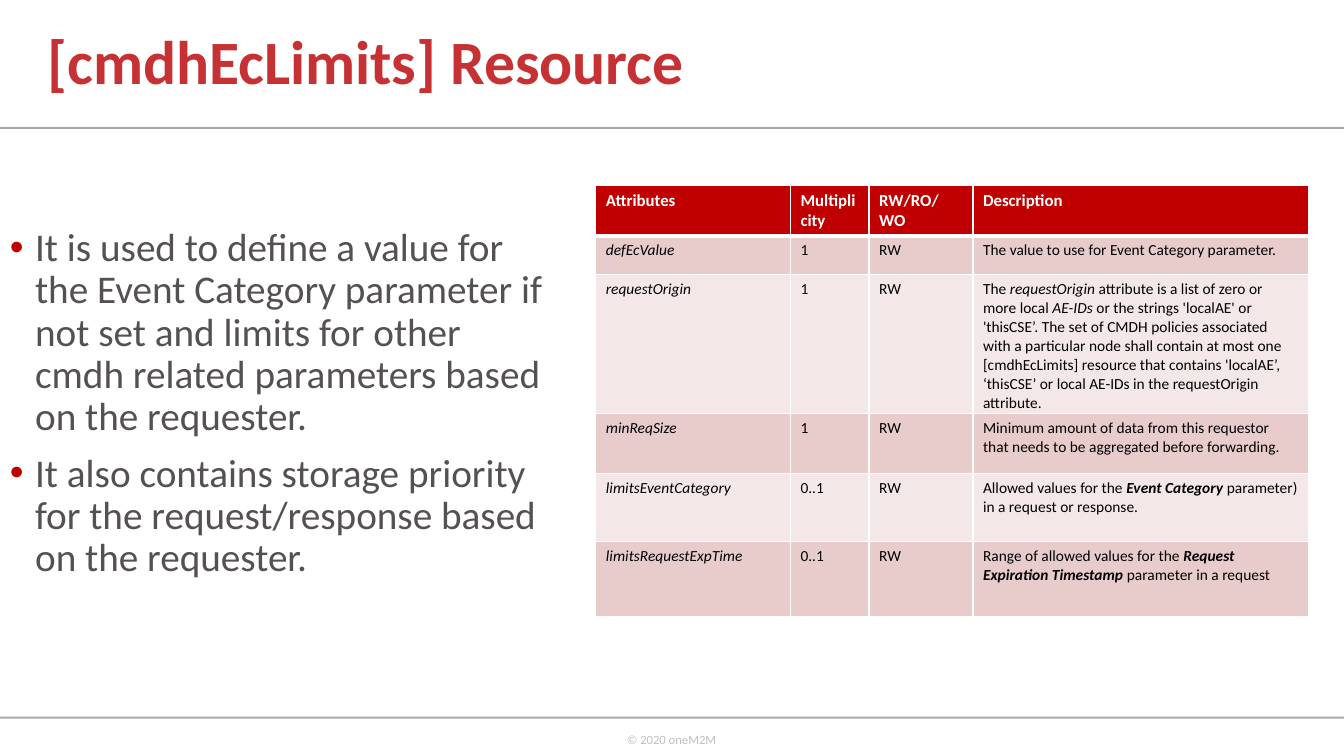
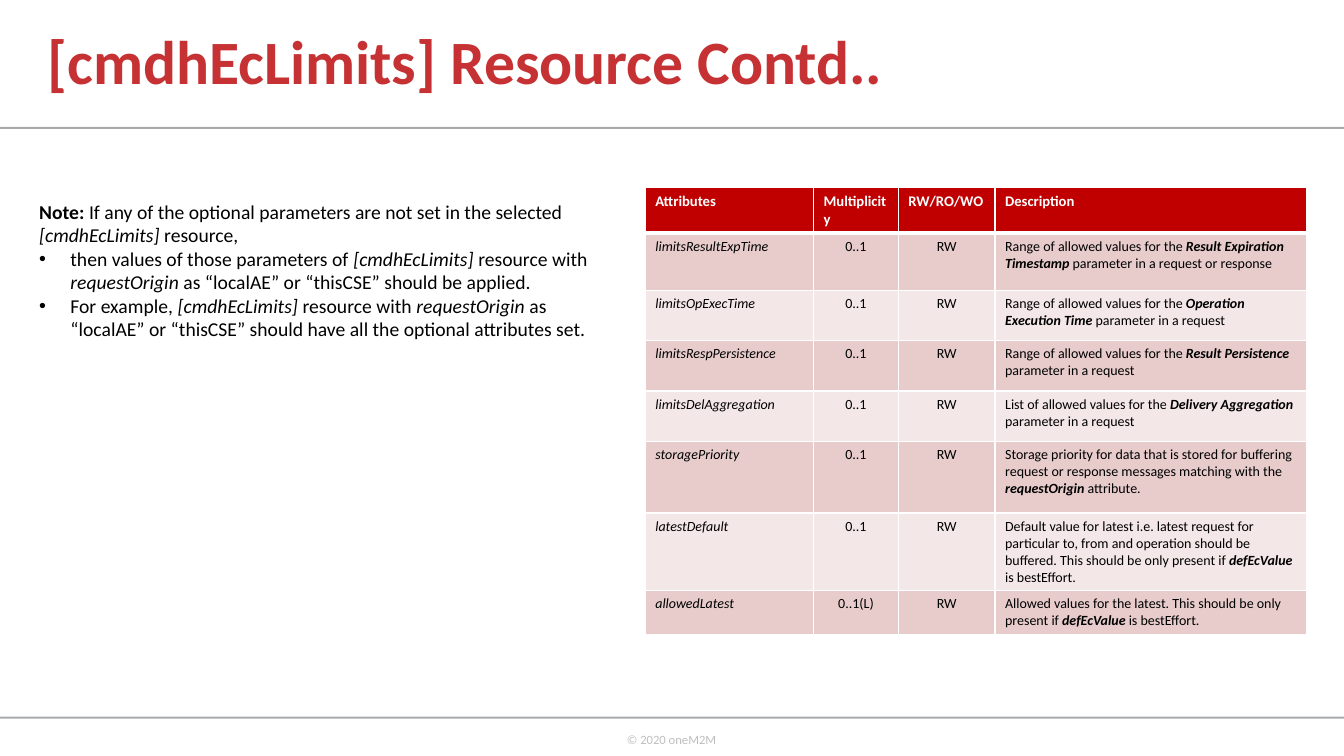
from lxml import etree
from pptx import Presentation
from pptx import util as u
from pptx.dml import color
from pptx.enum import shapes, text
from pptx.oxml import ns

Inches, Pt = u.Inches, u.Pt
FONT = "Calibri"
TITLE_RED, TABLE_RED = "C63133", "C00000"
RULE_GREY, FOOTER_GREY, BODY_GREY = "A7A9AC", "BFBFBF", "545054"
BLACK, WHITE = "000000", "FFFFFF"
BAND_FILLS = ["E8CCCC", "F4E7E7"]


def rgb(hex_code):
    return color.RGBColor.from_string(hex_code)


def write(paragraph, parts, size, hex_code, indent=0, bullet_hex=None):
    """Parts are plain strings or (string, style), with style made of b and i."""
    if indent:
        p_pr = paragraph._p.get_or_add_pPr()
        p_pr.set("marL", str(Inches(indent)))
        p_pr.set("indent", str(-Inches(indent)))
        if bullet_hex:
            bullet_color = etree.SubElement(p_pr, ns.qn("a:buClr"))
            etree.SubElement(bullet_color, ns.qn("a:srgbClr"), val=bullet_hex)
        etree.SubElement(p_pr, ns.qn("a:buFont"), typeface="Arial")
        etree.SubElement(p_pr, ns.qn("a:buChar"), char="•")
    for part in [parts] if isinstance(parts, str) else parts:
        words, style = (part, "") if isinstance(part, str) else part
        run = paragraph.add_run()
        run.text = words
        run.font.name, run.font.size = FONT, Pt(size)
        run.font.bold, run.font.italic = "b" in style, "i" in style
        run.font.color.rgb = rgb(hex_code)


# Table content: attribute, multiplicity, description; all are RW
HEADINGS = ["Attributes", "Multiplicity", "RW/RO/WO", "Description"]
RANGE = "Range of allowed values for the "
limits = [
    ("defEcValue", "1", "The value to use for Event Category parameter."),
    ("requestOrigin", "1", [
        "The ", ("requestOrigin", "i"),
        " attribute is a list of zero or more local ", ("AE-IDs", "i"),
        " or the strings 'localAE' or 'thisCSE’. The set of CMDH policies "
        "associated with a particular node shall contain at most one "
        "[cmdhEcLimits] resource that contains 'localAE’, ‘thisCSE’ or local "
        "AE-IDs in the requestOrigin attribute."]),
    ("minReqSize", "1", "Minimum amount of data from this requestor that needs "
                        "to be aggregated before forwarding."),
    ("limitsEventCategory", "0..1", [
        "Allowed values for the ", ("Event Category", "bi"),
        " parameter) in a request or response."]),
    ("limitsRequestExpTime", "0..1", [
        RANGE, ("Request Expiration Timestamp", "bi"),
        " parameter in a request"]),
]
more_limits = [
    ("limitsResultExpTime", "0..1", [
        RANGE, ("Result Expiration Timestamp ", "bi"),
        "parameter in a request or response"]),
    ("limitsOpExecTime", "0..1", [
        RANGE, ("Operation Execution Time ", "bi"), "parameter in a request"]),
    ("limitsRespPersistence", "0..1", [
        RANGE, ("Result Persistence", "bi"), " parameter in a request"]),
    ("limitsDelAggregation", "0..1", [
        "List of allowed values for the ", ("Delivery Aggregation ", "bi"),
        "parameter in a request"]),
    ("storagePriority", "0..1", [
        "Storage priority for data that is stored for buffering request or "
        "response messages matching with the ", ("requestOrigin", "bi"),
        " attribute."]),
    ("latestDefault", "0..1", [
        "Default value for latest i.e. latest request for particular to, from "
        "and operation should be buffered. This should be only present if ",
        ("defEcValue", "bi"), " is bestEffort."]),
    ("allowedLatest", "0..1(L)", [
        "Allowed values for the latest. This should be only present if ",
        ("defEcValue", "bi"), " is bestEffort."]),
]

# Text content
purpose = [
    "It is used to define a value for the Event Category parameter if not set "
    "and limits for other cmdh related parameters based on the requester.",
    "It also contains storage priority for the request/response based on the "
    "requester.",
]
note = [
    [("Note:", "b"),
     " If any of the optional parameters are not set in the selected ",
     ("[cmdhEcLimits] ", "i"), "resource,"],
    ["then values of those parameters of ", ("[cmdhEcLimits] ", "i"),
     "resource with ", ("requestOrigin ", "i"),
     "as “localAE” or “thisCSE” should be applied."],
    ["For example, ", ("[cmdhEcLimits]", "i"), " resource with ",
     ("requestOrigin", "i"),
     " as “localAE” or “thisCSE” should have all the optional attributes set."],
]

pages = [
    dict(title="[cmdhEcLimits] Resource",
         entries=limits, table_at=(5.91, 1.84), head_size=12, cell_size=11,
         widths=[1.93, 0.78, 1.03, 3.33], centred=(),
         heights=[0.39, 0.38, 0.97, 0.59, 0.68, 0.74],
         prose=purpose, prose_at=(0, 2.21, 5.49, 4.64), prose_size=28,
         prose_hex=BODY_GREY, bullet_hex=TABLE_RED, indents=[0.25, 0.25],
         line_spacing=0.9, gap=10),
    dict(title="[cmdhEcLimits] Resource Contd..",
         entries=more_limits, table_at=(6.4, 1.86), head_size=10.5, cell_size=10,
         widths=[1.67, 0.84, 0.96, 3.09], centred=(1, 2),
         heights=[0.43, 0.57, 0.5, 0.5, 0.5, 0.71, 0.73, 0.41],
         prose=note, prose_at=(0.29, 1.93, 5.85, 1.99), prose_size=14,
         prose_hex=BLACK, bullet_hex=None, indents=[0, 0.31, 0.31],
         line_spacing=1, gap=0),
]

deck = Presentation()
deck.slide_width, deck.slide_height = Inches(13.33), Inches(7.5)

for page in pages:
    slide = deck.slides.add_slide(deck.slide_layouts[5])

    # Rules below the title and above the footer
    for rule_top in (1.26, 7.11):
        rule = slide.shapes.add_shape(
            shapes.MSO_SHAPE.RECTANGLE,
            0, Inches(rule_top), deck.slide_width, Inches(0.02))
        rule.shadow.inherit = False
        rule.fill.solid()
        rule.fill.fore_color.rgb = rgb(RULE_GREY)
        rule.line.fill.background()

    # Footer
    footer = slide.shapes.add_textbox(
        Inches(6.12), Inches(7.21), Inches(1.12), Inches(0.4))
    footer.text_frame.word_wrap = False
    write(footer.text_frame.paragraphs[0], "© 2020 oneM2M", 9, FOOTER_GREY)

    # Title
    title = slide.shapes.title
    title.left, title.top = Inches(0.37), Inches(0)
    title.width, title.height = Inches(8.59), Inches(1.28)
    title.text_frame.auto_size = text.MSO_AUTO_SIZE.NONE
    title.text_frame.vertical_anchor = text.MSO_ANCHOR.MIDDLE
    heading = title.text_frame.paragraphs[0]
    heading.alignment = text.PP_ALIGN.LEFT
    heading.line_spacing = 0.9
    write(heading, [(page["title"], "b")], 44, TITLE_RED)

    # Prose on the left
    prose = slide.shapes.add_textbox(*map(Inches, page["prose_at"])).text_frame
    prose.word_wrap = True
    for index, (parts, indent) in enumerate(zip(page["prose"], page["indents"])):
        paragraph = prose.add_paragraph() if index else prose.paragraphs[0]
        paragraph.line_spacing = page["line_spacing"]
        if index:
            paragraph.space_before = Pt(page["gap"])
        write(paragraph, parts, page["prose_size"], page["prose_hex"],
              indent, page["bullet_hex"])

    # Attribute table
    rows = [[[(name, "b")] for name in HEADINGS]]
    rows += [[[(name, "i")], count, "RW", description]
             for name, count, description in page["entries"]]
    left, top = page["table_at"]
    attributes = slide.shapes.add_table(
        len(rows), len(HEADINGS), Inches(left), Inches(top),
        Inches(sum(page["widths"])), Inches(sum(page["heights"]))).table
    for column, width in zip(attributes.columns, page["widths"]):
        column.width = Inches(width)
    for row, height in zip(attributes.rows, page["heights"]):
        row.height = Inches(height)

    for r, row in enumerate(rows):
        for c, parts in enumerate(row):
            cell = attributes.cell(r, c)
            # White borders, thicker below the header
            for side in "LRTB":
                thick = (r, side) in ((0, "B"), (1, "T"))
                border = etree.SubElement(
                    cell._tc.get_or_add_tcPr(), ns.qn("a:ln" + side),
                    w=str(Pt(3 if thick else 1)))
                border_fill = etree.SubElement(border, ns.qn("a:solidFill"))
                etree.SubElement(border_fill, ns.qn("a:srgbClr"), val=WHITE)
            cell.fill.solid()
            cell.fill.fore_color.rgb = rgb(BAND_FILLS[(r - 1) % 2] if r else TABLE_RED)
            paragraph = cell.text_frame.paragraphs[0]
            if r and c in page["centred"]:
                paragraph.alignment = text.PP_ALIGN.CENTER
            write(paragraph, parts, page["cell_size"] if r else page["head_size"],
                  BLACK if r else WHITE)

deck.save("out.pptx")
